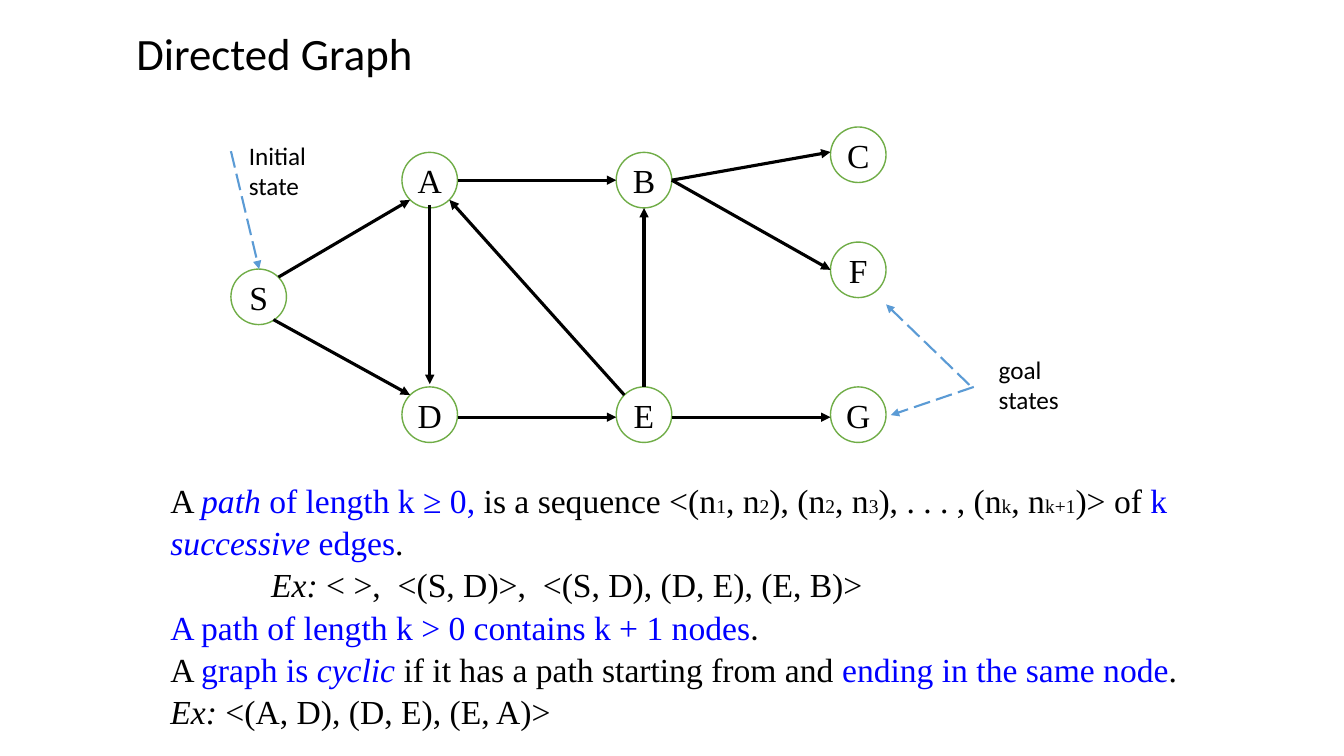
from lxml import etree
from pptx import Presentation
from pptx.dml.color import RGBColor
from pptx.enum.dml import MSO_LINE
from pptx.enum.shapes import MSO_CONNECTOR, MSO_SHAPE
from pptx.enum.text import MSO_ANCHOR, MSO_AUTO_SIZE, PP_ALIGN
from pptx.oxml.ns import qn
from pptx.util import Cm, Pt

STRAIGHT = MSO_CONNECTOR.STRAIGHT
OVAL = MSO_SHAPE.OVAL
LONG_DASH = MSO_LINE.LONG_DASH
TOP, MIDDLE = MSO_ANCHOR.TOP, MSO_ANCHOR.MIDDLE
LEFT, CENTER = PP_ALIGN.LEFT, PP_ALIGN.CENTER
NO_FIT = MSO_AUTO_SIZE.NONE
BLACK = RGBColor(0, 0, 0)
WHITE = RGBColor(255, 255, 255)
BLUE = RGBColor(0, 0, 255)
GREEN = RGBColor(0x70, 0xAD, 0x47)
SKY = RGBColor(0x5B, 0x9B, 0xD5)
SERIF, SANS = "Times New Roman", "Calibri"


def write(para, text, size=24, font=SERIF, color=BLACK, italic=False, baseline=0):
    span = para.add_run()
    span.text = text
    span.font.size = Pt(size)
    span.font.name = font
    span.font.color.rgb = color
    span.font.italic = italic
    if baseline:
        span.font._element.set("baseline", str(baseline))


def draw_arrow(start, end, color=BLACK, width=2.25, dash=None):
    arrow = page.shapes.add_connector(STRAIGHT, *[Cm(value) for value in (*start, *end)])
    arrow.line.color.rgb = color
    arrow.line.width = Pt(width)
    if dash:
        arrow.line.dash_style = dash
    etree.SubElement(arrow.line._get_or_add_ln(), qn("a:tailEnd"), type="triangle")
    etree.SubElement(arrow._element.spPr, qn("a:effectLst"))


deck = Presentation()
deck.slide_width, deck.slide_height = Cm(33.87), Cm(19.05)
page = deck.slides.add_slide(deck.slide_layouts[1])

title, body = page.placeholders
for holder, area, anchor in [
    (title, (3.18, 0.5, 8.15, 1.63), MIDDLE),
    (body, (4.04, 11.91, 26.6, 6.4), TOP),
]:
    holder.left, holder.top, holder.width, holder.height = [Cm(value) for value in area]
    holder.text_frame.auto_size = NO_FIT
    holder.text_frame.vertical_anchor = anchor

heading = title.text_frame.paragraphs[0]
heading.alignment = LEFT
write(heading, "Directed Graph", size=32, font=SANS)

blue = {"color": BLUE}
italic = {"italic": True}
blue_italic = {"color": BLUE, "italic": True}
subscript = {"baseline": -25}
statements = [
    (0, [
        ("A ", {}), ("path", blue_italic), (" of length k ≥ 0, ", blue),
        ("is a sequence <(n", {}), ("1", subscript), (", n", {}), ("2", subscript),
        ("), (n", {}), ("2", subscript), (", n", {}), ("3", subscript),
        ("), . . . , (n", {}), ("k", subscript), (", n", {}), ("k+1", subscript),
        (")> of ", {}), ("k ", blue), ("successive ", blue_italic), ("edges", blue), (".", {}),
    ]),
    (2.54, [("Ex: ", italic), ("< >,  <(S, D)>,  <(S, D), (D, E), (E, B)>", {})]),
    (0, [("A path of length k > 0 contains k + 1 nodes", blue), (".", {"font": SANS})]),
    (0, [
        ("A ", {}), ("graph is ", blue), ("cyclic ", blue_italic),
        ("if it has a path starting from and ", {}), ("ending in the same node", blue), (".", {}),
    ]),
    (0, [("Ex: ", italic), ("<(A, D), (D, E), (E, A)>", {})]),
]
for index, (indent, spans) in enumerate(statements):
    para = body.text_frame.add_paragraph() if index else body.text_frame.paragraphs[0]
    para.space_before = Pt(0)
    para.line_spacing = 1.05
    properties = para._p.get_or_add_pPr()
    properties.set("marL", str(Cm(indent)))
    properties.set("indent", "0")
    etree.SubElement(properties, qn("a:buNone"))
    for text, style in spans:
        write(para, text, **style)

DIAMETER = 1.4
RADIUS = DIAMETER / 2
columns = [10.13 + 5.4 * step for step in range(3)]
upper, lower = 3.84, 9.75
nodes = {
    "S": (5.82, 6.78),
    "A": (columns[0], upper),
    "D": (columns[0], lower),
    "E": (columns[1], lower),
    "B": (columns[1], upper),
    "F": (columns[2], 6.1),
    "G": (columns[2], lower),
    "C": (columns[2], 3.2),
}
for name, (left, top) in nodes.items():
    circle = page.shapes.add_shape(OVAL, Cm(left), Cm(top), Cm(DIAMETER), Cm(DIAMETER))
    circle.shadow.inherit = False
    circle.fill.solid()
    circle.fill.fore_color.rgb = WHITE
    circle.line.color.rgb = GREEN
    circle.line.width = Pt(1)
    frame = circle.text_frame
    frame.margin_left = frame.margin_right = frame.margin_top = frame.margin_bottom = 0
    frame.vertical_anchor = MIDDLE
    frame.paragraphs[0].alignment = CENTER
    write(frame.paragraphs[0], name)

DIAGONAL = 0.71
edges = [
    ("S", (DIAGONAL, -DIAGONAL), "A", (-DIAGONAL, DIAGONAL)),
    ("S", (0.53, 0.82), "D", (-DIAGONAL, -DIAGONAL)),
    ("A", (1, 0), "B", (-1, 0)),
    ("D", (1, 0.09), "E", (-1, 0.09)),
    ("E", (1, 0.09), "G", (-1, 0.09)),
    ("A", (0, 0.89), "D", (0, -1.1)),
    ("E", (0, -1), "B", (0, 1)),
    ("E", (-DIAGONAL, -DIAGONAL), "A", (DIAGONAL, DIAGONAL)),
    ("B", (1, 0), "C", (-1, -0.1)),
    ("B", (1, 0), "F", (-1, 0)),
]
for source, source_offset, target, target_offset in edges:
    start, end = [
        [corner + RADIUS * (1 + shift) for corner, shift in zip(nodes[name], offset)]
        for name, offset in ((source, source_offset), (target, target_offset))
    ]
    draw_arrow(start, end)

for start, end in [
    ((24.43, 9.7), (22.33, 7.67)),
    ((24.54, 9.75), (22.45, 10.46)),
    ((5.82, 3.81), (6.53, 6.78)),
]:
    draw_arrow(start, end, color=SKY, width=1.5, dash=LONG_DASH)

for text, left, top in [("Initial state", 6.02, 3.4), ("goal states", 24.92, 8.81)]:
    box = page.shapes.add_textbox(Cm(left), Cm(top), Cm(2.41), Cm(1.8))
    box.text_frame.word_wrap = True
    write(box.text_frame.paragraphs[0], text, size=18, font=SANS)

deck.save("out.pptx")
